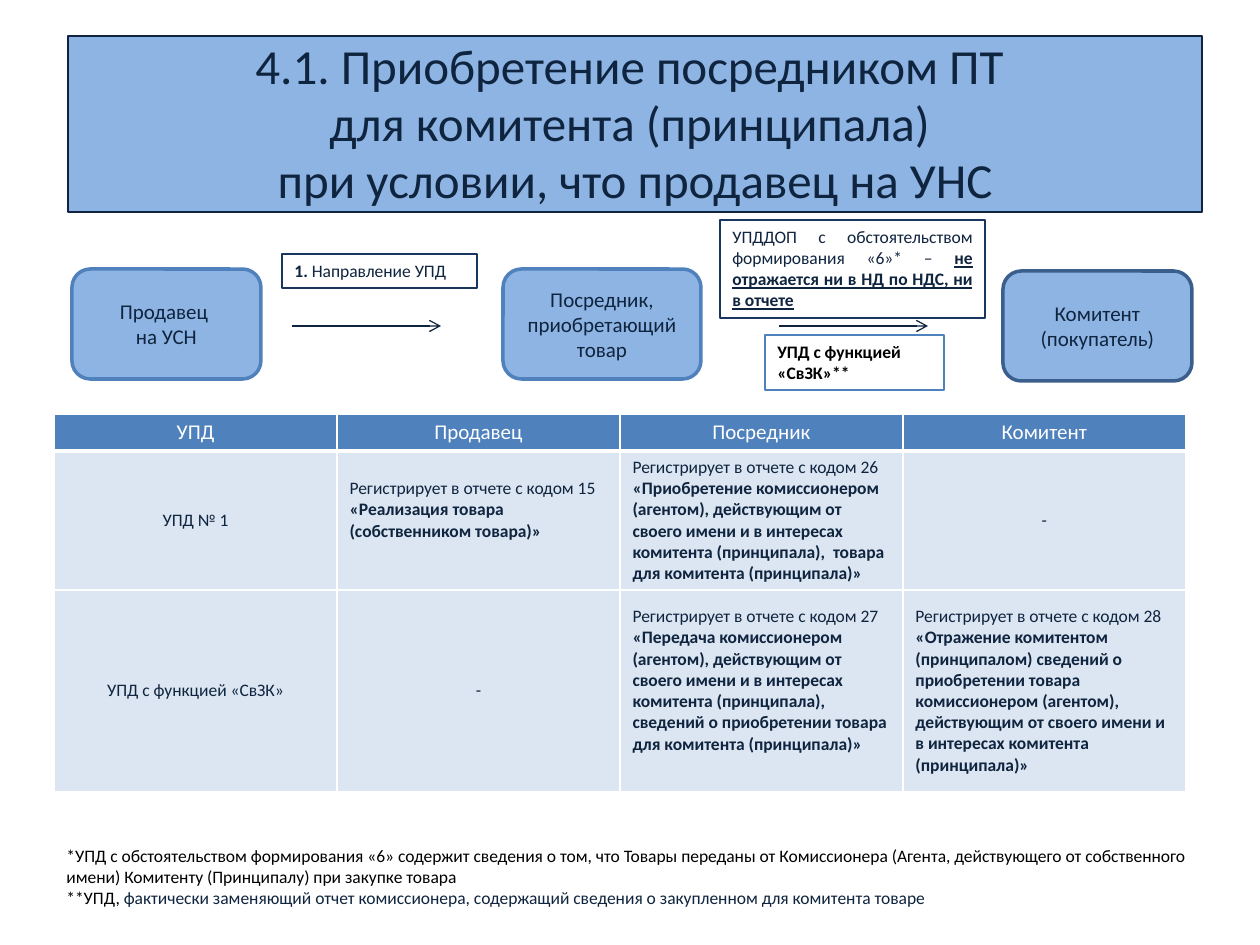
from lxml import etree
from pptx import Presentation
from pptx.dml.color import RGBColor
from pptx.enum.shapes import MSO_CONNECTOR, MSO_SHAPE
from pptx.enum.text import MSO_ANCHOR, PP_ALIGN
from pptx.oxml.ns import qn
from pptx.util import Pt

RECT, ROUNDED = MSO_SHAPE.RECTANGLE, MSO_SHAPE.ROUNDED_RECTANGLE
LEFT, CENTER, JUSTIFY = PP_ALIGN.LEFT, PP_ALIGN.CENTER, PP_ALIGN.JUSTIFY
TOP, MIDDLE = MSO_ANCHOR.TOP, MSO_ANCHOR.MIDDLE
STRAIGHT = MSO_CONNECTOR.STRAIGHT
PX = 914400 / 126

THEME = {
    "font": "Calibri", "title": 28, "party": 12, "body": 10,
    "ink": "0F243E", "black": "000000", "white": "FFFFFF",
    "panel": "8EB4E3", "accent": "4F81BD", "accent_dark": "3A5F8C",
    "note_line": "17375E", "row": "DCE6F2",
}


def color(name):
    return RGBColor.from_string(THEME[name])


def write(frame, paragraphs, size="body", ink="ink", align=LEFT):
    """Each paragraph is a list of (text, style); style holds b and u flags."""
    frame.word_wrap = True
    for index, spans in enumerate(paragraphs):
        para = frame.paragraphs[0] if index == 0 else frame.add_paragraph()
        para.alignment = align
        for text, style in spans:
            span = para.add_run()
            span.text = text
            span.font.name = THEME["font"]
            span.font.size = Pt(THEME[size])
            span.font.color.rgb = color(ink)
            span.font.bold = "b" in style
            span.font.underline = "u" in style


deck = Presentation()
deck.slide_width, deck.slide_height = round(1260 * PX), round(945 * PX)
page = deck.slides.add_slide(deck.slide_layouts[6])

# Title, parties and notes: shape, place, fill, line, width, size, ink, align, text
title_lines = ["4.1. Приобретение посредником ПТ ", "для комитента (принципала) ",
               "при условии, что продавец на УНС"]
boxes = [
    (RECT, (68, 36, 1134, 176), "panel", "ink", 0.75, "title", "ink", CENTER,
     [[(line, "")] for line in title_lines]),
    (ROUNDED, (72, 269, 189, 110), "panel", "accent", 2, "party", "ink", CENTER,
     [[("Продавец ", "")], [("на УСН", "")]]),
    (ROUNDED, (503, 269, 198, 110), "panel", "accent", 2, "party", "ink", CENTER,
     [[("Посредник, приобретающий товар", "")]]),
    (ROUNDED, (1003, 271, 189, 110), "panel", "accent_dark", 2, "party", "ink", CENTER,
     [[("Комитент (покупатель)", "")]]),
    (RECT, (282, 254, 195, 34), None, "note_line", 0.75, "body", "ink", LEFT,
     [[("1. ", "b"), ("Направление УПД", "")]]),
    (RECT, (720, 220, 265, 98), None, "note_line", 0.75, "body", "ink", JUSTIFY,
     [[("УПДДОП с обстоятельством формирования «6»* – ", ""),
       ("не отражается ни в НД по НДС, ни в отчете", "bu")]]),
    (RECT, (765, 335, 179, 55), None, "accent", 0.75, "body", "black", LEFT,
     [[("УПД с функцией «СвЗК»**", "b")]]),
]
for kind, place, fill, line, width, size, ink, align, paragraphs in boxes:
    box = page.shapes.add_shape(kind, *[round(value * PX) for value in place])
    box.shadow.inherit = False
    if fill:
        box.fill.solid()
        box.fill.fore_color.rgb = color(fill)
    else:
        box.fill.background()
    box.line.color.rgb = color(line)
    box.line.width = Pt(width)
    box.text_frame.vertical_anchor = MIDDLE if fill else TOP
    write(box.text_frame, paragraphs, size, ink, align)
    if size == "title":
        for para in box.text_frame.paragraphs:
            para.line_spacing = 0.97

# Arrows between the parties
for start in (292, 779):
    arrow = page.shapes.add_connector(
        STRAIGHT, *[round(value * PX) for value in (start, 326, start + 149, 326)])
    arrow.line.color.rgb = color("ink")
    arrow.line.width = Pt(0.75)
    etree.SubElement(arrow.line._get_or_add_ln(), qn("a:tailEnd"), type="arrow")
    etree.SubElement(arrow._element.spPr, qn("a:effectLst"))

# Table of registrations
rows = [
    ["УПД", "Продавец", "Посредник", "Комитент"],
    ["УПД № 1",
     ("Регистрирует в отчете с кодом 15", "«Реализация товара (собственником товара)»"),
     ("Регистрирует в отчете с кодом 26",
      "«Приобретение комиссионером (агентом), действующим от своего имени и в интересах "
      "комитента (принципала),  товара для комитента (принципала)»"),
     "-"],
    ["УПД с функцией «СвЗК»", "-",
     ("Регистрирует в отчете с кодом 27",
      "«Передача комиссионером (агентом), действующим от своего имени и в интересах "
      "комитента (принципала), сведений о приобретении товара для комитента (принципала)»"),
     ("Регистрирует в отчете с кодом 28",
      "«Отражение комитентом (принципалом) сведений о приобретении товара комиссионером "
      "(агентом), действующим от своего имени и в интересах комитента (принципала)»")],
]
row_heights = [37, 139, 202]
raised_cells = {(1, 1), (2, 2)}  # text sits above the middle of the cell
table = page.shapes.add_table(
    3, 4, *[round(value * PX) for value in (54, 414, 1132, sum(row_heights))]).table
for column in table.columns:
    column.width = round(283 * PX)
for row_index, (height, row) in enumerate(zip(row_heights, rows)):
    table.rows[row_index].height = round(height * PX)
    header = row_index == 0
    for column_index, content in enumerate(row):
        cell = table.cell(row_index, column_index)
        cell.vertical_anchor = MIDDLE
        cell.margin_top = round(5 * PX)
        raised = (row_index, column_index) in raised_cells
        cell.margin_bottom = round((26 if raised else 5) * PX)
        if isinstance(content, tuple):
            lead, operation = content
            write(cell.text_frame, [[(lead, "")], [(operation, "b")]])
        else:
            write(cell.text_frame, [[(content, "")]], "party" if header else "body",
                  "white" if header else "ink", CENTER)
        for side in "LRTB":
            heavy = (side == "B" and header) or (side == "T" and row_index == 1)
            border = etree.SubElement(cell._tc.get_or_add_tcPr(), qn("a:ln" + side),
                                      w=str(Pt(3 if heavy else 1)))
            paint = etree.SubElement(border, qn("a:solidFill"))
            etree.SubElement(paint, qn("a:srgbClr"), val=THEME["white"])
        cell.fill.solid()
        cell.fill.fore_color.rgb = color("accent" if header else "row")

# Footnotes
footnotes = page.shapes.add_textbox(*[round(value * PX) for value in (54, 839, 1191, 77)])
write(footnotes.text_frame, [
    [("*УПД с обстоятельством формирования «6» содержит сведения о том, что Товары переданы "
      "от Комиссионера (Агента, действующего от собственного имени) Комитенту (Принципалу) "
      "при закупке товара", "")],
    [("**УПД, ", ""),
     ("фактически заменяющий отчет комиссионера, содержащий сведения о закупленном "
      "для комитента товаре", "")],
], ink="black")
footnotes.text_frame.paragraphs[1].runs[1].font.color.rgb = color("ink")

deck.save("out.pptx")
